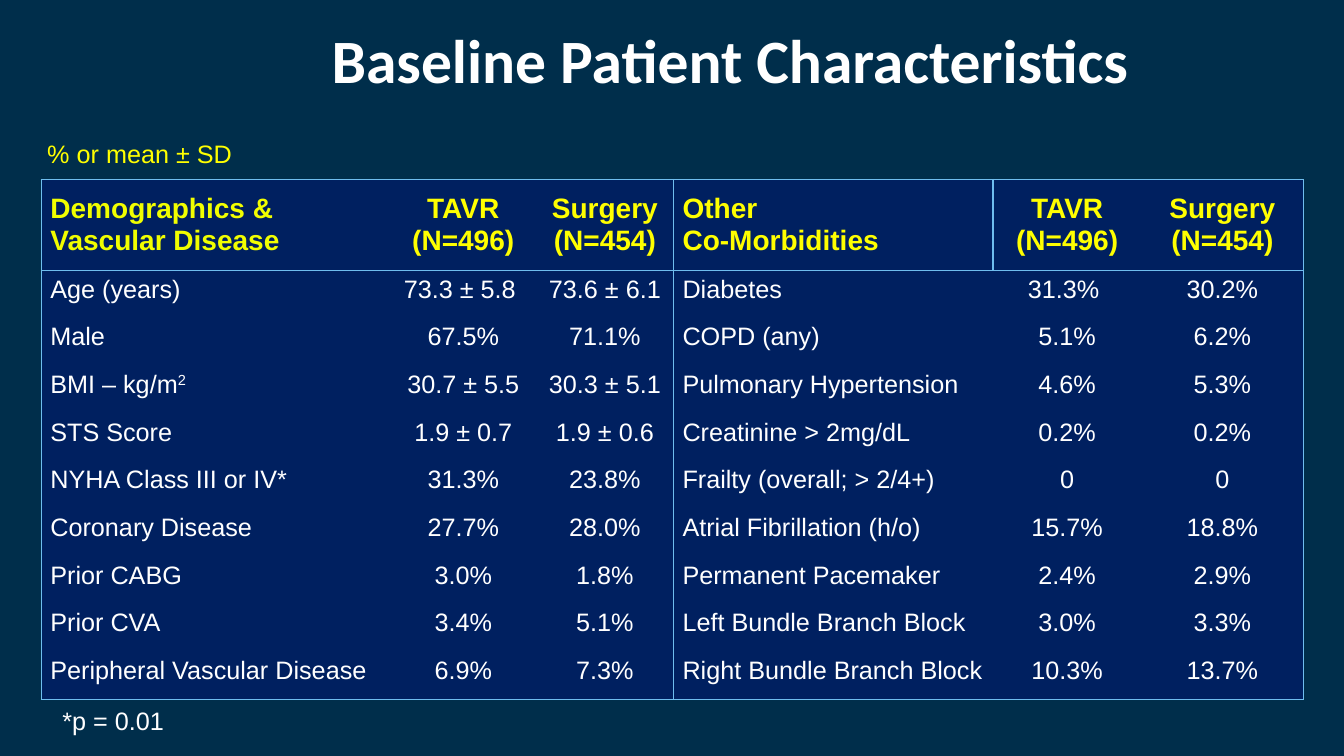
from lxml.etree import SubElement
from pptx import Presentation
from pptx.dml.color import RGBColor
from pptx.enum.text import MSO_ANCHOR, MSO_AUTO_SIZE, PP_ALIGN
from pptx.oxml.ns import qn
from pptx.util import Inches, Pt

BACKGROUND = RGBColor(0x00, 0x2E, 0x4B)
NAVY = RGBColor(0x00, 0x20, 0x60)
LIGHT_BLUE = RGBColor(0x6F, 0xBD, 0xEE)
WHITE = RGBColor(0xFF, 0xFF, 0xFF)
YELLOW = RGBColor(0xFF, 0xFF, 0x00)
LIME_YELLOW = RGBColor(0xF1, 0xFE, 0x00)

TITLE = "Baseline Patient Characteristics"
ROWS = [
    ("Demographics &\nVascular Disease", "TAVR\n(N=496)", "Surgery\n(N=454)",
     "Other\nCo-Morbidities", "TAVR\n(N=496)", "Surgery\n(N=454)"),
    ("Age (years)", "73.3 ± 5.8 ", "73.6 ± 6.1", "Diabetes", "31.3% ", "30.2%"),
    ("Male", "67.5%", "71.1%", "COPD (any)", "5.1%", "6.2%"),
    ("BMI – kg/m^2", "30.7 ± 5.5", "30.3 ± 5.1", "Pulmonary Hypertension", "4.6%", "5.3%"),
    ("STS Score", "1.9 ± 0.7", "1.9 ± 0.6", "Creatinine > 2mg/dL", "0.2%", "0.2%"),
    ("NYHA Class III or IV*", "31.3%", "23.8%", "Frailty (overall; > 2/4+)", "0", "0"),
    ("Coronary Disease", "27.7%", "28.0%", "Atrial Fibrillation (h/o)", "15.7%", "18.8%"),
    ("Prior CABG", "3.0%", "1.8%", "Permanent Pacemaker", "2.4%", "2.9%"),
    ("Prior CVA", "3.4%", "5.1%", "Left Bundle Branch Block", "3.0%", "3.3%"),
    ("Peripheral Vascular Disease", "6.9%", "7.3%", "Right Bundle Branch Block", "10.3%", "13.7%"),
]
COLUMN_WIDTHS = [3.46, 1.45, 1.36, 3.17, 1.47, 1.61]
LABEL_COLUMNS = (0, 3)
GROUP_END_COLUMNS = (2, 5)
TABLE_HEIGHT = 5.16
HEADER_HEIGHT = 0.9
NOTES = [
    ("% or mean ± SD", (0.37, 1.32, 2.05, 0.4), YELLOW),
    ("*p = 0.01", (0.52, 6.95, 1.29, 0.4), WHITE),
]


def write_text(frame, text, size=18, color=WHITE, bold=False, name="Arial", align=PP_ALIGN.LEFT):
    for index, line in enumerate(text.split("\n")):
        paragraph = frame.add_paragraph() if index else frame.paragraphs[0]
        paragraph.alignment = align
        for part_index, part in enumerate(line.split("^")):
            run = paragraph.add_run()
            run.text = part
            run.font.size = Pt(size)
            run.font.name = name
            run.font.bold = bold
            run.font.color.rgb = color
            if part_index:
                run.font._element.set("baseline", "30000")


def set_borders(cell, visible_sides):
    properties = cell._tc.get_or_add_tcPr()
    for side in "LRTB":
        line = SubElement(properties, qn(f"a:ln{side}"), w=str(Pt(1)))
        if side in visible_sides:
            fill = SubElement(line, qn("a:solidFill"))
            SubElement(fill, qn("a:srgbClr"), val=str(LIGHT_BLUE))
        else:
            SubElement(line, qn("a:noFill"))


def visible_sides(row, column):
    sides = ""
    if column in LABEL_COLUMNS:
        sides += "L"
    if column in GROUP_END_COLUMNS or (row, column) == (0, 3):
        sides += "R"
    if (row, column) == (0, 4):
        sides += "L"
    if row <= 1:
        sides += "T"
    if row in (0, len(ROWS) - 1):
        sides += "B"
    return sides


def add_characteristics_table(slide):
    frame = slide.shapes.add_table(
        len(ROWS), len(COLUMN_WIDTHS), Inches(0.41), Inches(1.78),
        Inches(sum(COLUMN_WIDTHS)), Inches(TABLE_HEIGHT))
    table = frame.table
    table.first_row = False
    table.horz_banding = False
    for column, width in zip(table.columns, COLUMN_WIDTHS):
        column.width = Inches(width)
    body_height = (TABLE_HEIGHT - HEADER_HEIGHT) / (len(ROWS) - 1)
    for row_index, values in enumerate(ROWS):
        is_header = row_index == 0
        table.rows[row_index].height = Inches(HEADER_HEIGHT if is_header else body_height)
        for column_index, value in enumerate(values):
            cell = table.cell(row_index, column_index)
            cell.margin_left = cell.margin_right = Inches(0.09)
            cell.margin_top = cell.margin_bottom = Inches(0.05)
            cell.vertical_anchor = MSO_ANCHOR.MIDDLE if is_header else MSO_ANCHOR.TOP
            set_borders(cell, visible_sides(row_index, column_index))
            cell.fill.solid()
            cell.fill.fore_color.rgb = NAVY
            header_color = YELLOW if column_index else LIME_YELLOW
            write_text(
                cell.text_frame, value,
                size=20 if is_header else 18,
                color=header_color if is_header else WHITE,
                bold=is_header,
                align=PP_ALIGN.LEFT if column_index in LABEL_COLUMNS else PP_ALIGN.CENTER)


def main():
    presentation = Presentation()
    presentation.slide_width = Inches(13.33)
    presentation.slide_height = Inches(7.5)
    slide = presentation.slides.add_slide(presentation.slide_layouts[5])
    slide.background.fill.solid()
    slide.background.fill.fore_color.rgb = BACKGROUND

    title = slide.shapes.title
    title.left, title.top, title.width, title.height = map(Inches, (1.58, 0.17, 11.33, 0.83))
    frame = title.text_frame
    frame.margin_left = frame.margin_right = Inches(0.05)
    frame.margin_top = frame.margin_bottom = Inches(0.05)
    frame.vertical_anchor = MSO_ANCHOR.MIDDLE
    frame.auto_size = MSO_AUTO_SIZE.NONE
    write_text(frame, TITLE, size=44, bold=True, name="Calibri", align=PP_ALIGN.CENTER)

    add_characteristics_table(slide)

    for text, box, color in NOTES:
        note = slide.shapes.add_textbox(*map(Inches, box))
        note.text_frame.word_wrap = False
        note.text_frame.auto_size = MSO_AUTO_SIZE.SHAPE_TO_FIT_TEXT
        write_text(note.text_frame, text, color=color)

    presentation.save("out.pptx")


if __name__ == "__main__":
    main()
